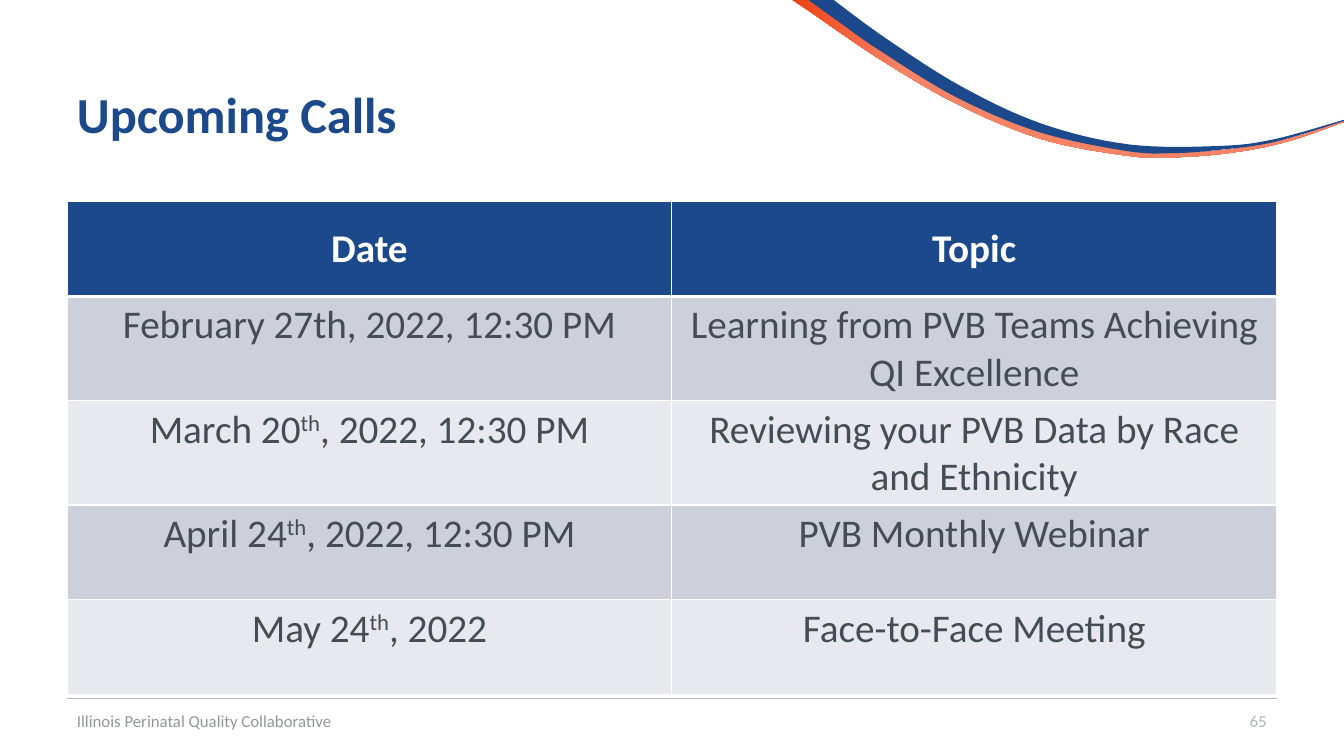
from lxml import etree
from pptx import Presentation
from pptx.dml.color import RGBColor
from pptx.enum import shapes, text
from pptx.oxml.ns import qn
from pptx.util import Cm, Pt

TITLE = "Upcoming Calls"
FOOTER = "Illinois Perinatal Quality Collaborative"
PAGE = "65"
# ^ marks where superscript starts and ends
CALLS = [
    ("Date", "Topic"),
    ("February 27th, 2022, 12:30 PM", "Learning from PVB Teams Achieving QI Excellence"),
    ("March 20^th^, 2022, 12:30 PM", "Reviewing your PVB Data by Race and Ethnicity"),
    ("April 24^th^, 2022, 12:30 PM", "PVB Monthly Webinar"),
    ("May 24^th^, 2022", "Face-to-Face Meeting"),
]

# Upper edge left to right, lower edge right to left, in cm
ORANGE_BAND = (
    [(20.45, 0), (22.4, 1.37), (24.33, 2.51), (26.39, 3.38), (28.58, 3.81),
     (29.67, 3.86), (31.06, 3.76), (32.44, 3.51), (33.87, 3.05)],
    [(33.87, 3.07), (32.46, 3.56), (31.09, 3.84), (29.69, 3.96), (28.55, 3.94),
     (26.34, 3.53), (24.26, 2.69), (22.3, 1.57), (20.42, 0.3), (19.96, 0)],
)
BLUE_BAND = (
    [(21.01, 0), (22.33, 0.97), (24.23, 2.18), (26.26, 3.12), (28.45, 3.64),
     (30.71, 3.68), (32.11, 3.51), (33.87, 3.02)],
    [(33.87, 3.05), (32.11, 3.58), (30.71, 3.78), (29.57, 3.86), (28.42, 3.81),
     (26.19, 3.33), (24.08, 2.44), (22.12, 1.24), (21.18, 0.58), (20.37, 0)],
)

THEME = {
    "font": "Calibri",
    "blue": "1C498B", "orange": "F04115", "salmon": "F58366",
    "white": "FFFFFF", "body": "444C55", "bands": ("CDD0DA", "E8E9EE"),
    "rule": "AFB3B9", "footer": "949699",
    "title_size": 36, "table_size": 28, "footer_size": 12,
}

SLIDE_W, SLIDE_H = 33.87, 19.05
MARGIN, CONTENT_W = 1.69, 30.48
TABLE_TOP, ROW_H = 5.08, 2.39
RULE_Y, FOOTER_Y, FOOTER_H = 17.6, 17.65, 1.02
PAGE_W = 7.62


def rgb(name):
    return RGBColor.from_string(THEME.get(name, name))


def smooth(points, steps=8):
    """Return points along a Catmull-Rom curve through the given ones."""
    padded = [points[0], *points, points[-1]]
    curve = []
    for a, b, c, d in zip(padded, padded[1:], padded[2:], padded[3:]):
        for i in range(steps):
            t = i / steps
            curve.append(tuple(
                (2 * q + (r - p) * t + (2 * p - 5 * q + 4 * r - s) * t ** 2
                 + (3 * q - p - 3 * r + s) * t ** 3) / 2
                for p, q, r, s in zip(a, b, c, d)))
    return curve + [points[-1]]


def add_band(slide, edges):
    outline = [(Cm(x), Cm(y)) for edge in edges for x, y in smooth(edge)]
    builder = slide.shapes.build_freeform(*outline[0])
    builder.add_line_segments(outline[1:], close=True)
    band = builder.convert_to_shape()
    band.shadow.inherit = False
    band.line.fill.background()
    return band


def write(tf, words, size, color, bold=False, align=text.PP_ALIGN.LEFT):
    p = tf.paragraphs[0]
    p.alignment = align
    for i, part in enumerate(words.split("^")):
        r = p.add_run()
        r.text = part
        r.font.name, r.font.size, r.font.bold = THEME["font"], Pt(THEME[size]), bold
        r.font.color.rgb = rgb(color)
        if i % 2:
            r._r.get_or_add_rPr().set("baseline", "30000")


def add_label(slide, box, words, size, color, **style):
    tf = slide.shapes.add_textbox(*map(Cm, box)).text_frame
    tf.word_wrap = True
    tf.vertical_anchor = text.MSO_ANCHOR.MIDDLE
    write(tf, words, size, color, **style)


def add_borders(cell, top, bottom):
    tcPr = cell._tc.get_or_add_tcPr()
    for side, width in (("L", 1), ("R", 1), ("T", top), ("B", bottom)):
        ln = etree.SubElement(tcPr, qn(f"a:ln{side}"), w=str(Pt(width)))
        fill = etree.SubElement(ln, qn("a:solidFill"))
        etree.SubElement(fill, qn("a:srgbClr"), val=THEME["white"])


def add_calls(slide):
    n_rows, n_cols = len(CALLS), len(CALLS[0])
    table = slide.shapes.add_table(
        n_rows, n_cols, Cm(MARGIN), Cm(TABLE_TOP),
        Cm(CONTENT_W), Cm(ROW_H * n_rows)).table
    table.horz_banding = False
    for i, call in enumerate(CALLS):
        header = i == 0
        for j, words in enumerate(call):
            cell = table.cell(i, j)
            add_borders(cell, top=3 if i == 1 else 1, bottom=3 if header else 1)
            cell.fill.solid()
            cell.fill.fore_color.rgb = rgb("blue" if header else THEME["bands"][(i - 1) % 2])
            if header:
                cell.vertical_anchor = text.MSO_ANCHOR.MIDDLE
            write(cell.text_frame, words, "table_size", "white" if header else "body",
                  bold=header, align=text.PP_ALIGN.CENTER)


def main():
    prs = Presentation()
    prs.slide_width, prs.slide_height = Cm(SLIDE_W), Cm(SLIDE_H)
    slide = prs.slides.add_slide(prs.slide_layouts[6])

    orange = add_band(slide, ORANGE_BAND)
    orange.fill.gradient()
    orange.fill.gradient_angle = 0
    stops = zip(orange.fill.gradient_stops, ("orange", "salmon"), (0, 0.2))
    for stop, color, position in stops:
        stop.color.rgb, stop.position = rgb(color), position
    blue = add_band(slide, BLUE_BAND)
    blue.fill.solid()
    blue.fill.fore_color.rgb = rgb("blue")

    right = MARGIN + CONTENT_W
    rule = slide.shapes.add_connector(
        shapes.MSO_CONNECTOR.STRAIGHT, Cm(MARGIN), Cm(RULE_Y), Cm(right), Cm(RULE_Y))
    rule.line.color.rgb, rule.line.width = rgb("rule"), Pt(0.5)
    etree.SubElement(rule._element.spPr, qn("a:effectLst"))

    add_label(slide, (MARGIN, 1.02, CONTENT_W, 3.68), TITLE, "title_size", "blue", bold=True)
    add_calls(slide)
    add_label(slide, (right - PAGE_W, FOOTER_Y, PAGE_W, FOOTER_H), PAGE,
              "footer_size", "rule", align=text.PP_ALIGN.RIGHT)
    add_label(slide, (MARGIN, FOOTER_Y, 11.43, FOOTER_H), FOOTER, "footer_size", "footer")
    prs.save("out.pptx")


if __name__ == "__main__":
    main()
